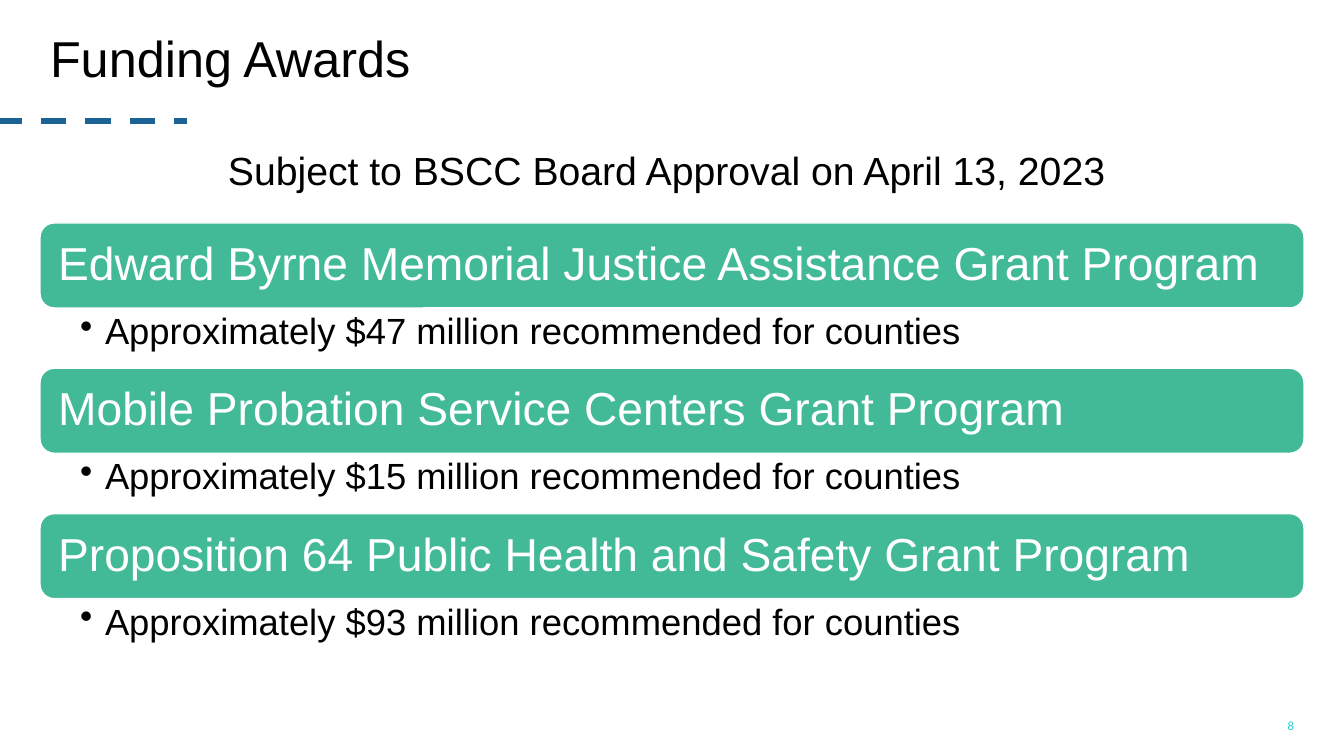
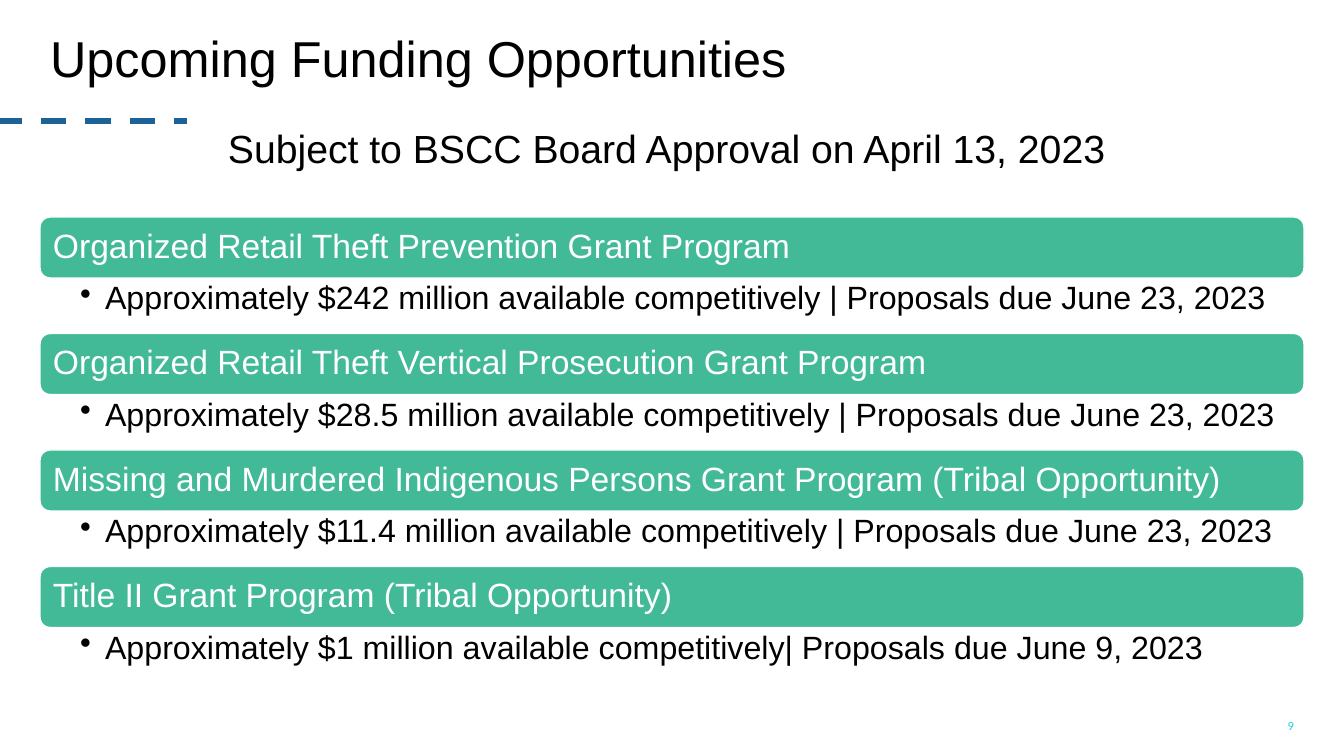
import pptx
import pptx.dml.color
import pptx.enum.dml
import pptx.enum.shapes
import pptx.enum.text
import pptx.oxml.ns
import pptx.util
from lxml import etree

PX = 914400 / 100.8
SLIDE_SIZE = (1344, 756)

BLACK = "000000"
WHITE = "FFFFFF"
GREEN = "42BA97"
NAVY = "1D6294"
CYAN = "27CED7"

ANCHOR = pptx.enum.text.MSO_ANCHOR
ALIGN = pptx.enum.text.PP_ALIGN

TITLE_BOX = (40, 16, 1264, 77)
PAGE_NUMBER_BOX = (1002, 713, 302, 27)
SUBTITLE = "Subject to BSCC Board Approval on April 13, 2023"

SLIDES = [
    {
        "title": "Funding Awards",
        "page": "8",
        "subtitle_box": (218, 141, 908, 57),
        "list_box": (40, 223, 1264, 436),
        "sizes": {"band": 85, "heading": 33, "heading_inset": 14,
                  "detail": 26, "detail_insets": (40, 5, 26, 5)},
        "programs": [
            ("Edward Byrne Memorial Justice Assistance Grant Program",
             "Approximately $47 million recommended for counties"),
            ("Mobile Probation Service Centers Grant Program",
             "Approximately $15 million recommended for counties"),
            ("Proposition 64 Public Health and Safety Grant Program",
             "Approximately $93 million recommended for counties"),
        ],
    },
    {
        "title": "Upcoming Funding Opportunities",
        "page": "9",
        "subtitle_box": (218, 119, 908, 57),
        "list_box": (40, 217, 1264, 466),
        "sizes": {"band": 61, "heading": 24, "heading_inset": 10,
                  "detail": 23, "detail_insets": (40, 4, 23, 4)},
        "programs": [
            ("Organized Retail Theft Prevention Grant Program",
             "Approximately $242 million available competitively | Proposals due June 23, 2023"),
            ("Organized Retail Theft Vertical Prosecution Grant Program",
             "Approximately $28.5 million available competitively | Proposals due June 23, 2023"),
            ("Missing and Murdered Indigenous Persons Grant Program (Tribal Opportunity)",
             "Approximately $11.4 million available competitively | Proposals due June 23, 2023"),
            ("Title II Grant Program (Tribal Opportunity)",
             "Approximately $1 million available competitively| Proposals due June 9, 2023"),
        ],
    },
]


def px(length):
    return pptx.util.Emu(round(length * PX))


def emu_box(box):
    return [px(length) for length in box]


def color(hex_string):
    return pptx.dml.color.RGBColor.from_string(hex_string)


def set_attributes(target, values):
    for name, value in values.items():
        setattr(target, name, value)


def add_bullet(paragraph, indent):
    properties = paragraph._p.get_or_add_pPr()
    properties.set("marL", str(px(indent)))
    properties.set("indent", str(-px(indent)))
    bullet = etree.SubElement(properties, pptx.oxml.ns.qn("a:buChar"))
    bullet.set("char", "•")


def write_text(shape, text, size, hex_color=BLACK, font="Arial", insets=(10, 5, 10, 5),
               anchor=ANCHOR.TOP, align=ALIGN.LEFT, spacing=1.0, bullet_indent=0):
    """Fill a shape with one formatted paragraph; insets are left, top, right, bottom."""
    frame = shape.text_frame
    sides = ("margin_left", "margin_top", "margin_right", "margin_bottom")
    set_attributes(frame, dict(zip(sides, emu_box(insets))))
    set_attributes(frame, {"word_wrap": True, "vertical_anchor": anchor})
    paragraph = frame.paragraphs[0]
    set_attributes(paragraph, {"alignment": align, "line_spacing": spacing})
    if bullet_indent:
        add_bullet(paragraph, bullet_indent)
    run = paragraph.add_run()
    run.text = text
    set_attributes(run.font, {"name": font, "size": pptx.util.Pt(size)})
    run.font.color.rgb = color(hex_color)


def add_text(slide, box, text, size, **formats):
    write_text(slide.shapes.add_textbox(*emu_box(box)), text, size, **formats)


def add_dashed_rule(slide):
    rule = slide.shapes.add_connector(
        pptx.enum.shapes.MSO_CONNECTOR.STRAIGHT, px(-3), px(121), px(187), px(121))
    set_attributes(rule.line, {"width": pptx.util.Pt(4.5),
                               "dash_style": pptx.enum.dml.MSO_LINE.DASH})
    rule.line.color.rgb = color(NAVY)
    etree.SubElement(rule._element.spPr, pptx.oxml.ns.qn("a:effectLst"))


def add_frame(slide, title, page):
    """Place the rule, page number and title that every slide carries."""
    add_dashed_rule(slide)
    add_text(slide, PAGE_NUMBER_BOX, page, 9, hex_color=CYAN, font="Calibri",
             align=ALIGN.RIGHT)
    add_text(slide, TITLE_BOX, title, 36, anchor=ANCHOR.BOTTOM, spacing=0.9)


def add_band(slide, box, heading, size, inset):
    band = slide.shapes.add_shape(
        pptx.enum.shapes.MSO_SHAPE.ROUNDED_RECTANGLE, *emu_box(box))
    band.shadow.inherit = False
    band.fill.solid()
    band.fill.fore_color.rgb = color(GREEN)
    band.line.color.rgb = color(WHITE)
    band.line.width = pptx.util.Pt(1)
    write_text(band, heading, size, hex_color=WHITE, insets=(inset,) * 4,
               anchor=ANCHOR.MIDDLE, spacing=0.9)


def add_program_list(slide, box, programs, sizes):
    """Divide the box into equal rows, each a band with a bullet below it."""
    left, top, width, height = box
    row_height = height / len(programs)
    band_height = sizes["band"]
    for index, (heading, detail) in enumerate(programs):
        row_top = top + index * row_height
        add_band(slide, (left, row_top, width, band_height), heading,
                 sizes["heading"], sizes["heading_inset"])
        add_text(slide, (left, row_top + band_height, width, row_height - band_height),
                 detail, sizes["detail"], insets=sizes["detail_insets"],
                 spacing=0.9, bullet_indent=25)


def add_program_slide(presentation, content):
    slide = presentation.slides.add_slide(presentation.slide_layouts[6])
    add_frame(slide, content["title"], content["page"])
    add_program_list(slide, content["list_box"], content["programs"], content["sizes"])
    add_text(slide, content["subtitle_box"], SUBTITLE, 28)


def main():
    presentation = pptx.Presentation()
    presentation.slide_width, presentation.slide_height = emu_box(SLIDE_SIZE)
    for content in SLIDES:
        add_program_slide(presentation, content)
    presentation.save("out.pptx")


if __name__ == "__main__":
    main()
